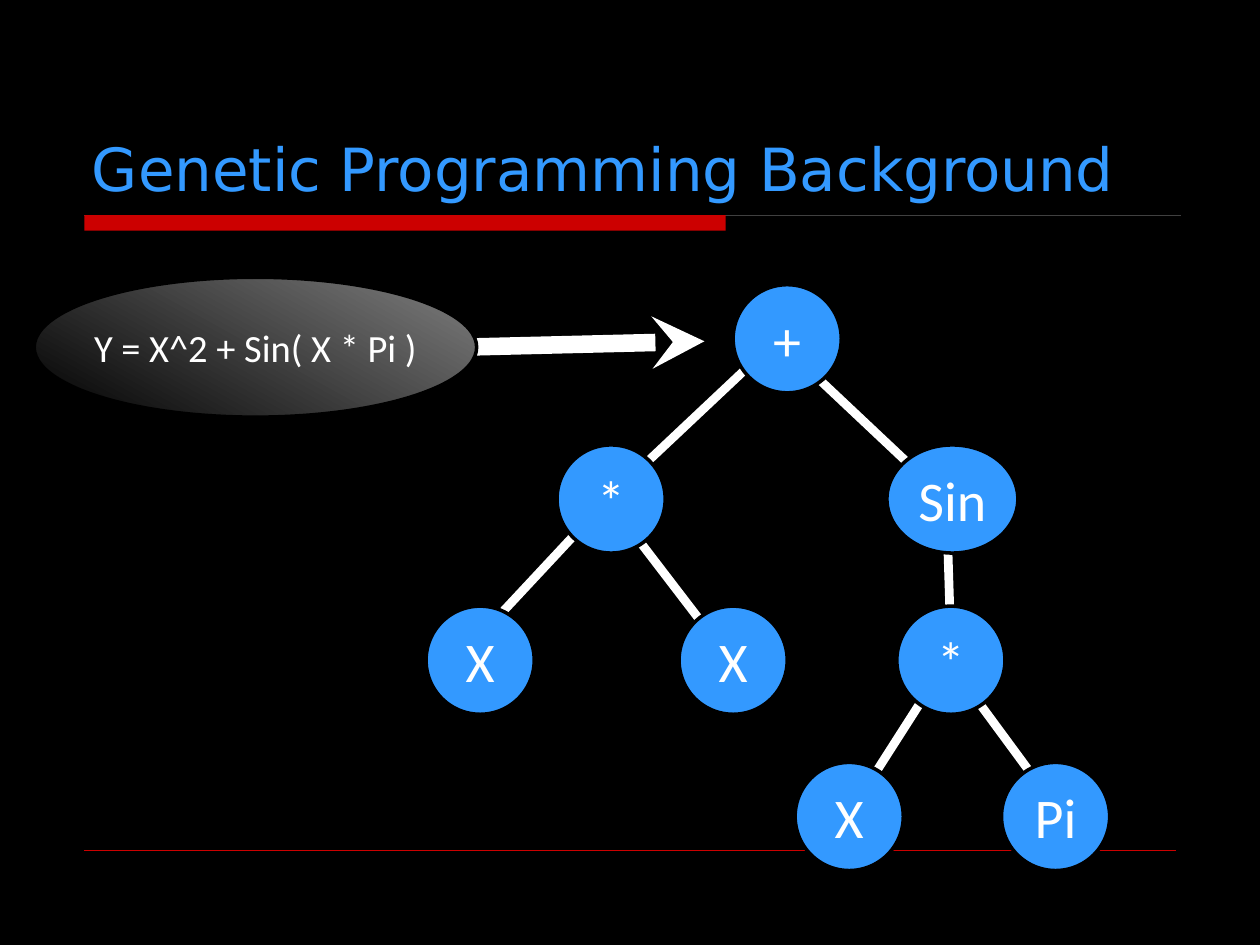
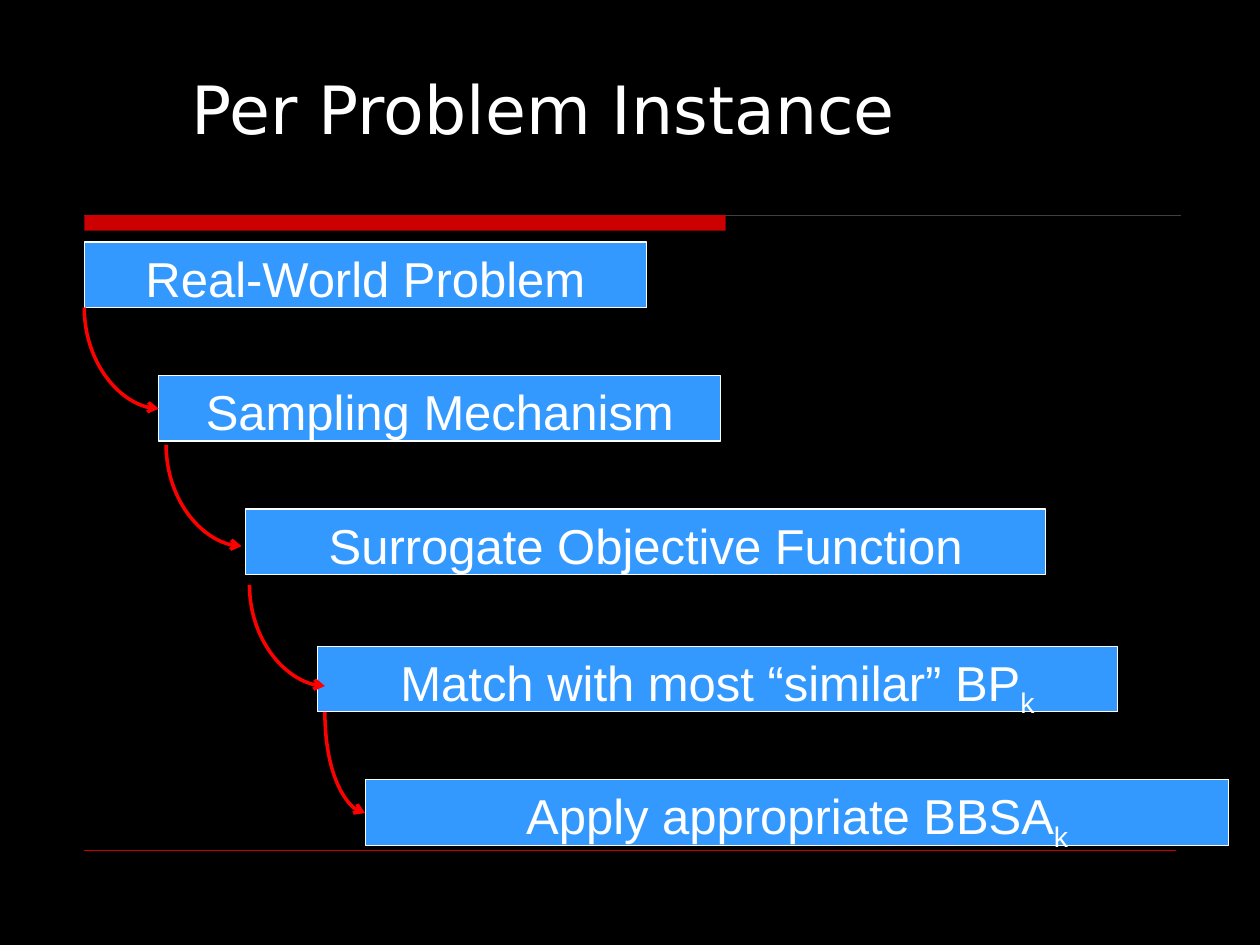
from lxml.etree import SubElement
from pptx import Presentation
from pptx.dml.color import RGBColor
from pptx.enum.shapes import MSO_CONNECTOR, MSO_SHAPE
from pptx.enum.text import MSO_ANCHOR, MSO_AUTO_SIZE, PP_ALIGN
from pptx.oxml.ns import qn
from pptx.util import Cm, Pt

COLORS = {
    "black": "000000",
    "white": "FFFFFF",
    "blue": "3399FF",
    "band": "CC0000",
    "arrow": "FF0000",
    "rule": "404040",
    "grey": "7F7F7F",
}
RGB = {name: RGBColor.from_string(code) for name, code in COLORS.items()}


def write(sp, text, font, color="white", align=PP_ALIGN.CENTER, **frame):
    """Fill a shape with one run; font and frame hold attribute values."""
    tf = sp.text_frame
    for name, value in frame.items():
        setattr(tf, name, value)
    p = tf.paragraphs[0]
    p.alignment = align
    r = p.add_run()
    r.text = text
    for name, value in font.items():
        setattr(r.font, name, value)
    r.font.color.rgb = RGB[color]
    return p


def style_line(conn, color, width, arrow=None):
    """Colour a connector, drop its shadow and add an optional arrowhead."""
    conn.line.color.rgb = RGB[color]
    conn.line.width = Pt(width)
    sppr = conn.element.spPr
    if arrow:
        SubElement(sppr.find(qn("a:ln")), qn("a:tailEnd"), type=arrow)
    SubElement(sppr, qn("a:effectLst"))


prs = Presentation()
prs.slide_width, prs.slide_height = Cm(25.4), Cm(19.05)
master = prs.slide_master
master.background.fill.solid()
master.background.fill.fore_color.rgb = RGB["black"]
layout = prs.slide_layouts[5]

# Titles
TITLES = [
    ("Genetic Programming Background", 34, "blue", MSO_ANCHOR.BOTTOM,
     (1.6, 0.84, 22.23, 3.38)),
    ("Per Problem Instance", 38, "white", MSO_ANCHOR.TOP,
     (3.61, 1.24, 20.22, 1.88)),
]
slides = []
for text, size, color, anchor, box in TITLES:
    s = prs.slides.add_slide(layout)
    title = s.shapes.title
    title.left, title.top, title.width, title.height = map(Cm, box)
    write(title, text, {"name": "DejaVu Sans", "size": Pt(size)}, color,
          PP_ALIGN.LEFT, vertical_anchor=anchor, margin_right=Cm(0.1),
          auto_size=MSO_AUTO_SIZE.NONE)
    slides.append(s)
tree, steps = slides

# Band and rules, shared through the master
top_rule = tree.shapes.add_connector(
    MSO_CONNECTOR.STRAIGHT, Cm(1.7), Cm(4.34), Cm(23.8), Cm(4.34))
style_line(top_rule, "rule", 0.75)
band = tree.shapes.add_shape(
    MSO_SHAPE.RECTANGLE, Cm(1.7), Cm(4.34), Cm(12.93), Cm(0.31))
band.shadow.inherit = False
band.fill.solid()
band.fill.fore_color.rgb = RGB["band"]
band.line.fill.background()
foot_rule = tree.shapes.add_connector(
    MSO_CONNECTOR.STRAIGHT, Cm(1.7), Cm(17.15), Cm(23.7), Cm(17.15))
style_line(foot_rule, "band", 0.25)
for number, sp in enumerate((top_rule, band, foot_rule), 101):
    sp.element.xpath(".//p:cNvPr")[0].set("id", str(number))
    master.shapes.element.append(sp.element)

# Expression tree: links lie behind the nodes
LINKS = [
    (19.18, 10.16, 15.75, 6.93),
    (17.15, 16.36, 19.1, 13.31),
    (19.2, 13.44, 21.46, 16.51),
    (19.18, 13.36, 19.08, 10.13),
    (9.7, 12.8, 12.19, 10.13),
    (12.34, 10.19, 14.73, 13.31),
    (12.93, 9.42, 15.49, 7.01),
]
arrow = tree.shapes.add_connector(
    MSO_CONNECTOR.STRAIGHT, Cm(4.72), Cm(7.11), Cm(14.2), Cm(6.88))
style_line(arrow, "white", 10, "stealth")
for ends in LINKS:
    link = tree.shapes.add_connector(MSO_CONNECTOR.STRAIGHT, *map(Cm, ends))
    style_line(link, "white", 5)

NODE = 2.18
LEVELS = [
    (5.74, [("+", 14.78, NODE)]),
    (8.97, [("*", 11.23, NODE), ("Sin", 17.88, 2.64)]),
    (12.22, [("X", 8.59, NODE), ("X", 13.69, NODE), ("*", 18.08, NODE)]),
    (15.37, [("X", 16.03, NODE), ("Pi", 20.19, NODE)]),
]
ovals = [(text, x, y, w, NODE, 32) for y, row in LEVELS for text, x, w in row]
ovals.append(("Y = X^2 + Sin( X * Pi )", 0.69, 5.59, 8.92, 2.82, 22))
no_margins = dict.fromkeys(
    ("margin_left", "margin_top", "margin_right", "margin_bottom"), 0)
for text, x, y, w, h, size in ovals:
    sp = tree.shapes.add_shape(MSO_SHAPE.OVAL, Cm(x), Cm(y), Cm(w), Cm(h))
    sp.shadow.inherit = False
    sp.fill.solid()
    sp.fill.fore_color.rgb = RGB["blue"]
    sp.line.color.rgb = RGB["black"]
    sp.line.width = Pt(2)
    write(sp, text, {"name": "Calibri", "size": Pt(size)}, word_wrap=False,
          vertical_anchor=MSO_ANCHOR.MIDDLE, **no_margins)
formula = sp
formula.fill.gradient()
formula.fill.gradient_angle = 61
for stop, color in zip(formula.fill.gradient_stops, ("black", "grey")):
    stop.color.rgb = RGB[color]

# Cascade of steps
STEPS = [
    ("Real-World Problem", "", 1.7, 4.88, 11.33),
    ("Sampling Mechanism", "", 3.2, 7.57, 11.33),
    ("Surrogate Objective Function", "", 4.95, 10.26, 16.13),
    ("Match with most “similar” BP", "k", 6.4, 13.03, 16.13),
    ("Apply appropriate BBSA", "k", 7.37, 15.72, 17.4),
]
step_font = {"name": "Arial", "size": Pt(28)}
for text, index, x, y, w in STEPS:
    sp = steps.shapes.add_shape(
        MSO_SHAPE.RECTANGLE, Cm(x), Cm(y), Cm(w), Cm(1.32))
    sp.shadow.inherit = False
    sp.fill.solid()
    sp.fill.fore_color.rgb = RGB["blue"]
    sp.line.color.rgb = RGB["white"]
    sp.line.width = Pt(0.75)
    write(sp, text, step_font, vertical_anchor=MSO_ANCHOR.TOP)
    if index:
        write(sp, index, step_font)
        sp.element.xpath(".//a:rPr")[-1].set("baseline", "-25000")

# Each curve drops from its start, then turns right: a quarter-turned bend
CURVES = [(1.7, 6.2, 1.5), (3.35, 8.97, 1.52),
          (5.03, 11.79, 1.52), (6.55, 14.35, 0.81)]
DROP = 2.04
for x, y, run in CURVES:
    mid_x, mid_y = x + run / 2, y + DROP / 2
    curve = steps.shapes.add_connector(
        MSO_CONNECTOR.CURVE, Cm(mid_x + DROP / 2), Cm(mid_y - run / 2),
        Cm(mid_x - DROP / 2), Cm(mid_y + run / 2))
    curve.element.spPr.find(qn("a:xfrm")).set("rot", str(270 * 60000))
    curve.element.spPr.find(qn("a:prstGeom")).set("prst", "curvedConnector2")
    style_line(curve, "arrow", 2, "arrow")

prs.save("out.pptx")
